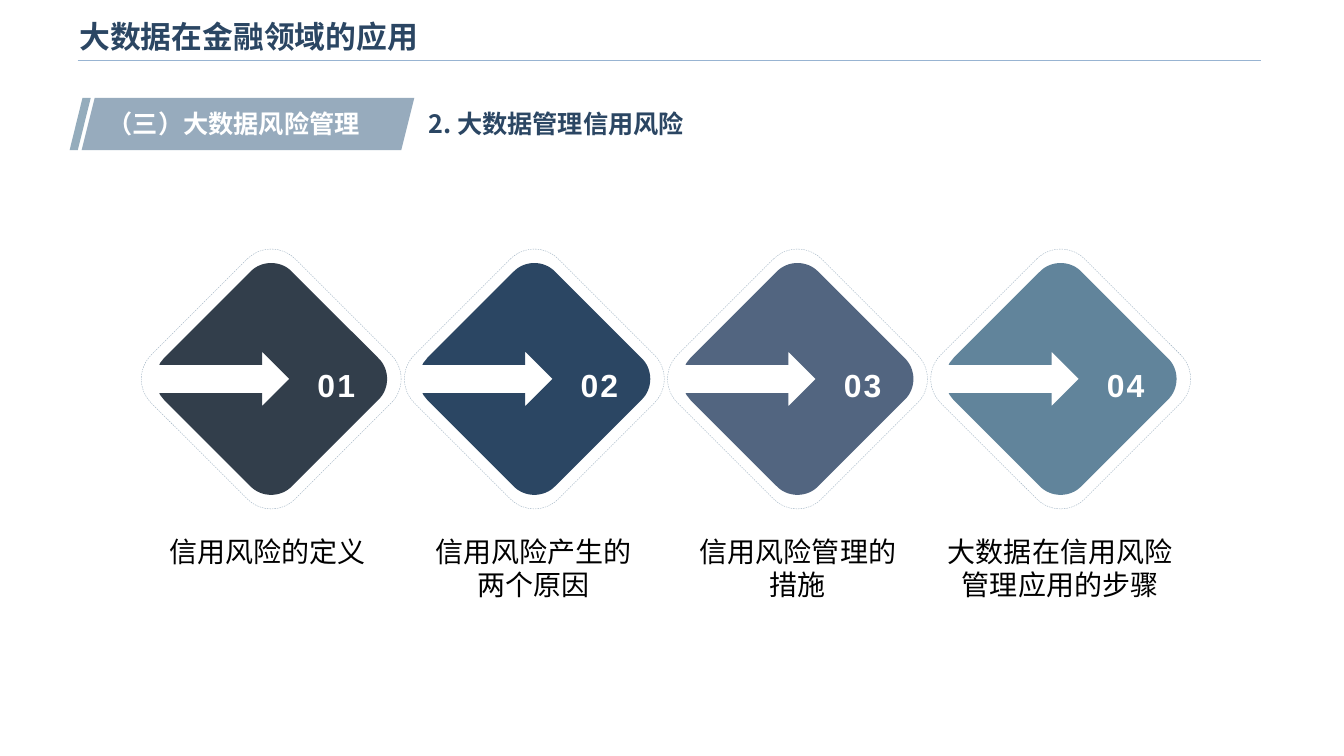
from pptx import Presentation
from pptx.dml.color import RGBColor
from pptx.enum.dml import MSO_LINE
from pptx.enum.shapes import MSO_CONNECTOR, MSO_SHAPE
from pptx.enum.text import MSO_ANCHOR, PP_ALIGN
from pptx.oxml.ns import qn
from pptx.util import Inches, Pt
from lxml import etree

CJK = "Noto Sans CJK SC"
NAVY = "2B4663"
MIST = "97ABBD"


def color(value):
    return RGBColor.from_string(value)


def add_text(box, lines, size, font, ink, bold=False, align=PP_ALIGN.LEFT):
    left, top, width, height = box
    frame = slide.shapes.add_textbox(
        Inches(left), Inches(top), Inches(width), Inches(height)).text_frame
    frame.word_wrap = True
    for index, line in enumerate(lines):
        paragraph = frame.paragraphs[0] if index == 0 else frame.add_paragraph()
        paragraph.alignment = align
        run = paragraph.add_run()
        run.text = line
        run.font.size = Pt(size)
        run.font.name = font
        run.font.bold = bold
        run.font.color.rgb = color(ink)
        etree.SubElement(run.font._element, qn("a:ea"), typeface=CJK)
    return frame


presentation = Presentation()
presentation.slide_width = Inches(13.33)
presentation.slide_height = Inches(7.5)
slide = presentation.slides.add_slide(presentation.slide_layouts[6])

title_rule = slide.shapes.add_connector(
    MSO_CONNECTOR.STRAIGHT, Inches(0.77), Inches(0.6), Inches(12.51), Inches(0.6))
title_rule.line.color.rgb = color("98B4D2")
title_rule.line.width = Pt(1)
etree.SubElement(title_rule._element.spPr, qn("a:effectLst"))

title = add_text((0.69, 0.09, 10.71, 0.53), ["大数据在金融领域的应用"], 22, "Arial", NAVY, True)
title.vertical_anchor = MSO_ANCHOR.MIDDLE

for left, width, slant, fill in [(0.69, 0.21, 0.613, "94ACBC"), (0.81, 3.3, 0.25, MIST)]:
    banner = slide.shapes.add_shape(
        MSO_SHAPE.PARALLELOGRAM, Inches(left), Inches(0.97), Inches(width), Inches(0.52))
    banner.adjustments[0] = slant
    banner.shadow.inherit = False
    banner.fill.solid()
    banner.fill.fore_color.rgb = color(fill)
    banner.line.fill.background()

add_text((0.97, 1.03, 2.92, 0.4), ["（三）大数据风险管理"], 18, CJK, "FFFFFF", True)
add_text((4.15, 1.03, 3.8, 0.4), ["2. 大数据管理信用风险"], 18, CJK, NAVY, True)

right_corner = []
for step in range(17):
    t = step / 16
    ends, middle = (1 - t) ** 3 + t ** 3, 3 * t * (1 - t)
    right_corner.append((1.06 * ends + 1.18 * middle,
                         0.21 * (t ** 3 - (1 - t) ** 3) + 0.1 * middle * (2 * t - 1)))
top_corner = [(y, -x) for x, y in right_corner]
bottom_corner = [(-y, x) for x, y in right_corner]
lower_notch = [(-1.06, 0.21), (-1.1, 0.16), (-1.11, 0.14), (-0.09, 0.14), (-0.09, 0.27)]
upper_notch = [(x, -y) for x, y in reversed(lower_notch)]
diamond_outline = (top_corner + right_corner + bottom_corner
                   + lower_notch + [(0.18, 0)] + upper_notch)

steps = [
    ("323E4B", 1.44, ["信用风险的定义"]),
    (NAVY, 4.08, ["信用风险产生的", "两个原因"]),
    ("526580", 6.7, ["信用风险管理的", "措施"]),
    ("61849B", 9.3, ["大数据在信用风险管理应用的步骤"]),
]
FIRST_X, PITCH, CENTER_Y, FRAME = 2.69, 2.61, 3.76, 2.02

for index, (fill, label_left, label) in enumerate(steps):
    center_x = FIRST_X + PITCH * index
    border = slide.shapes.add_shape(
        MSO_SHAPE.ROUNDED_RECTANGLE, Inches(center_x - FRAME / 2),
        Inches(CENTER_Y - FRAME / 2), Inches(FRAME), Inches(FRAME))
    border.rotation = 45
    border.shadow.inherit = False
    border.fill.background()
    border.line.color.rgb = color(MIST)
    border.line.width = Pt(0.25)
    border.line.dash_style = MSO_LINE.DASH

    points = [(Inches(center_x + x), Inches(CENTER_Y + y)) for x, y in diamond_outline]
    builder = slide.shapes.build_freeform(*points[0])
    builder.add_line_segments(points[1:], close=True)
    diamond = builder.convert_to_shape()
    diamond.shadow.inherit = False
    diamond.fill.solid()
    diamond.fill.fore_color.rgb = color(fill)
    diamond.line.fill.background()

    number = add_text((center_x + 0.36, 3.46, 0.69, 0.6), [f"{index + 1:02}"],
                      22.8, "Arial", "FFFFFF", True).paragraphs[0]
    number.line_spacing = 1.3
    number.runs[0].font._element.set("spc", "150")

    add_text((label_left, 5.25, 2.43, 0.77), label, 20, CJK, "000000", align=PP_ALIGN.CENTER)

presentation.save("out.pptx")
